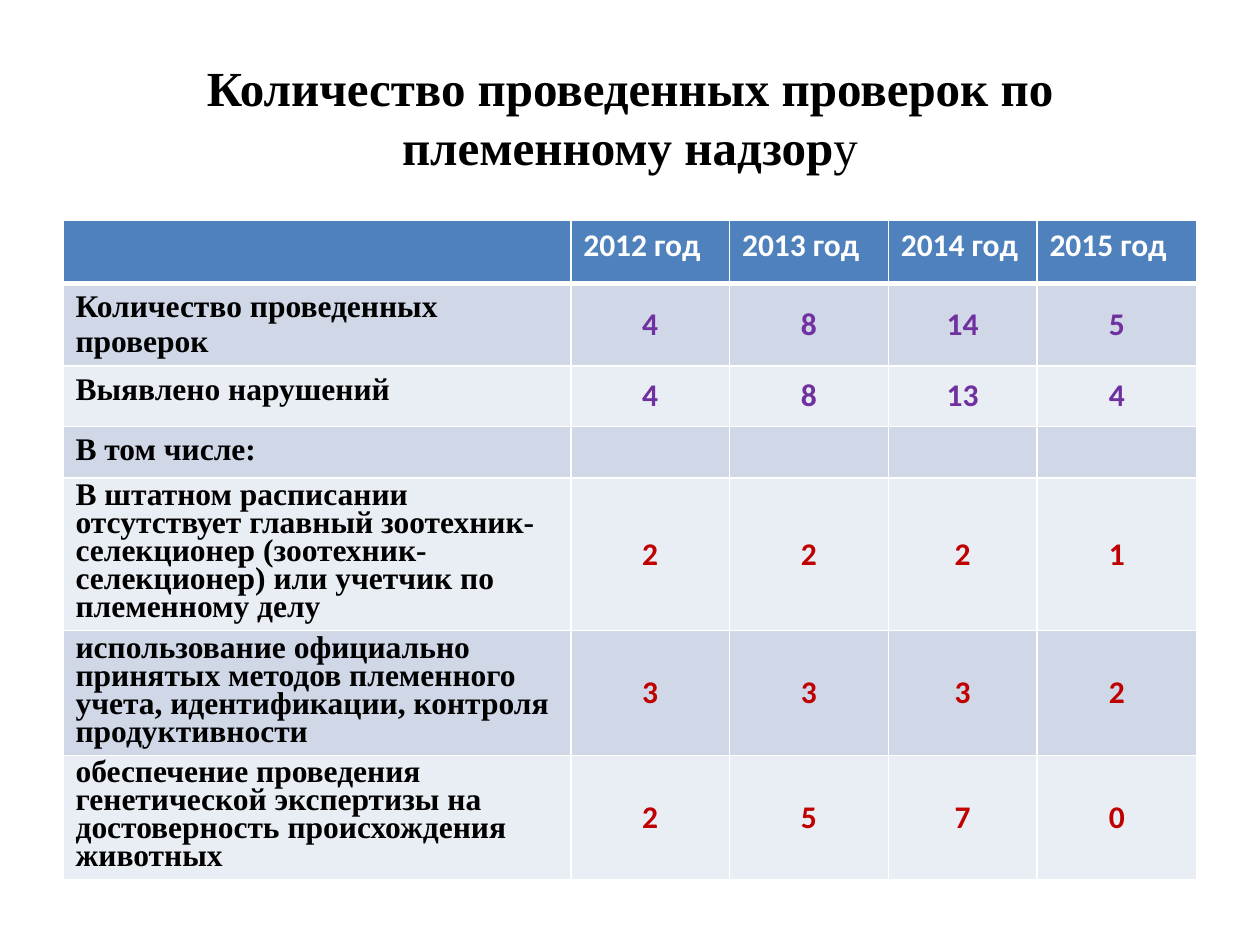
from dataclasses import dataclass

from lxml.etree import SubElement
from pptx import Presentation
from pptx.dml.color import RGBColor
from pptx.enum.text import MSO_ANCHOR as Anchor, PP_ALIGN as Align
from pptx.oxml.ns import qn
from pptx.util import Inches, Pt


@dataclass(frozen=True)
class Theme:
    serif: str = "Times New Roman"
    sans: str = "Calibri"
    title_size: int = 28
    table_size: int = 18
    tight_spacing: int = 16
    ink: str = "000000"
    white: str = "FFFFFF"
    header: str = "4F81BD"
    bands: tuple = ("D0D8E8", "E9EDF4")
    total: str = "7030A0"
    detail: str = "C00000"


THEME = Theme()
TITLE = [("Количество проведенных проверок по племенному надзор", True), ("у", False)]
YEARS = ["2012 год", "2013 год", "2014 год", "2015 год"]
TOTALS = [
    ("Количество проведенных проверок", [4, 8, 14, 5]),
    ("Выявлено нарушений", [4, 8, 13, 4]),
    ("В том числе:", [""] * len(YEARS)),
]
DETAILS = [
    ("В штатном расписании отсутствует главный зоотехник-селекционер "
     "(зоотехник-селекционер) или учетчик по племенному делу", [2, 2, 2, 1]),
    ("использование официально принятых методов племенного учета, "
     "идентификации, контроля продуктивности", [3, 3, 3, 2]),
    ("обеспечение проведения генетической экспертизы на достоверность "
     "происхождения животных", [2, 5, 7, 0]),
]
COLUMN_WIDTHS = [4.03, 1.26, 1.26, 1.18, 1.27]
ROW_HEIGHTS = [0.5, 0.65, 0.48, 0.41, 1.21, 0.99, 0.99]
MARGIN = 0.5


def add_text(paragraph, text, font, size, color, bold=True):
    run = paragraph.add_run()
    run.text = text
    run.font.name = font
    run.font.size = Pt(size)
    run.font.bold = bold
    run.font.color.rgb = RGBColor.from_string(color)


def style_cell(cell, fill, bottom=1):
    properties = cell._tc.get_or_add_tcPr()
    for side, width in (("L", 1), ("R", 1), ("T", 1), ("B", bottom)):
        line = SubElement(properties, qn(f"a:ln{side}"), w=str(Pt(width)))
        solid = SubElement(line, qn("a:solidFill"))
        SubElement(solid, qn("a:srgbClr"), val=THEME.white)
    cell.fill.solid()
    cell.fill.fore_color.rgb = RGBColor.from_string(fill)


def write_cell(cell, text, font, color):
    paragraph = cell.text_frame.paragraphs[0]
    if text != "":
        add_text(paragraph, str(text), font, THEME.table_size, color)
    else:
        paragraph.font.size = Pt(THEME.table_size)
    return paragraph


def add_title(slide):
    title = slide.shapes.title
    title.left, title.top = Inches(MARGIN), Inches(0.3)
    title.width, title.height = Inches(9), Inches(1.25)
    title.text_frame.vertical_anchor = Anchor.MIDDLE
    paragraph = title.text_frame.paragraphs[0]
    paragraph.alignment = Align.CENTER
    for text, bold in TITLE:
        add_text(paragraph, text, THEME.serif, THEME.title_size, THEME.ink, bold)


def add_inspections(slide):
    table = slide.shapes.add_table(
        len(ROW_HEIGHTS), len(COLUMN_WIDTHS), Inches(MARGIN), Inches(1.75),
        Inches(sum(COLUMN_WIDTHS)), Inches(sum(ROW_HEIGHTS))).table
    for column, width in zip(table.columns, COLUMN_WIDTHS):
        column.width = Inches(width)
    for row, height in zip(table.rows, ROW_HEIGHTS):
        row.height = Inches(height)

    for cell, year in zip(table.rows[0].cells, ["", *YEARS]):
        style_cell(cell, THEME.header, bottom=3)
        write_cell(cell, year, THEME.sans, THEME.white)

    for index, (label, counts) in enumerate(TOTALS + DETAILS):
        is_detail = index >= len(TOTALS)
        label_cell, *count_cells = table.rows[index + 1].cells
        for cell in (label_cell, *count_cells):
            style_cell(cell, THEME.bands[index % 2])
        paragraph = write_cell(label_cell, label, THEME.serif, THEME.ink)
        if is_detail:
            paragraph.line_spacing = Pt(THEME.tight_spacing)
        for cell, count in zip(count_cells, counts):
            cell.vertical_anchor = Anchor.MIDDLE
            color = THEME.detail if is_detail else THEME.total
            write_cell(cell, count, THEME.sans, color).alignment = Align.CENTER


def main():
    deck = Presentation()
    deck.slide_width, deck.slide_height = Inches(10), Inches(7.5)
    slide = deck.slides.add_slide(deck.slide_layouts[5])
    add_title(slide)
    add_inspections(slide)
    deck.save("out.pptx")


if __name__ == "__main__":
    main()
